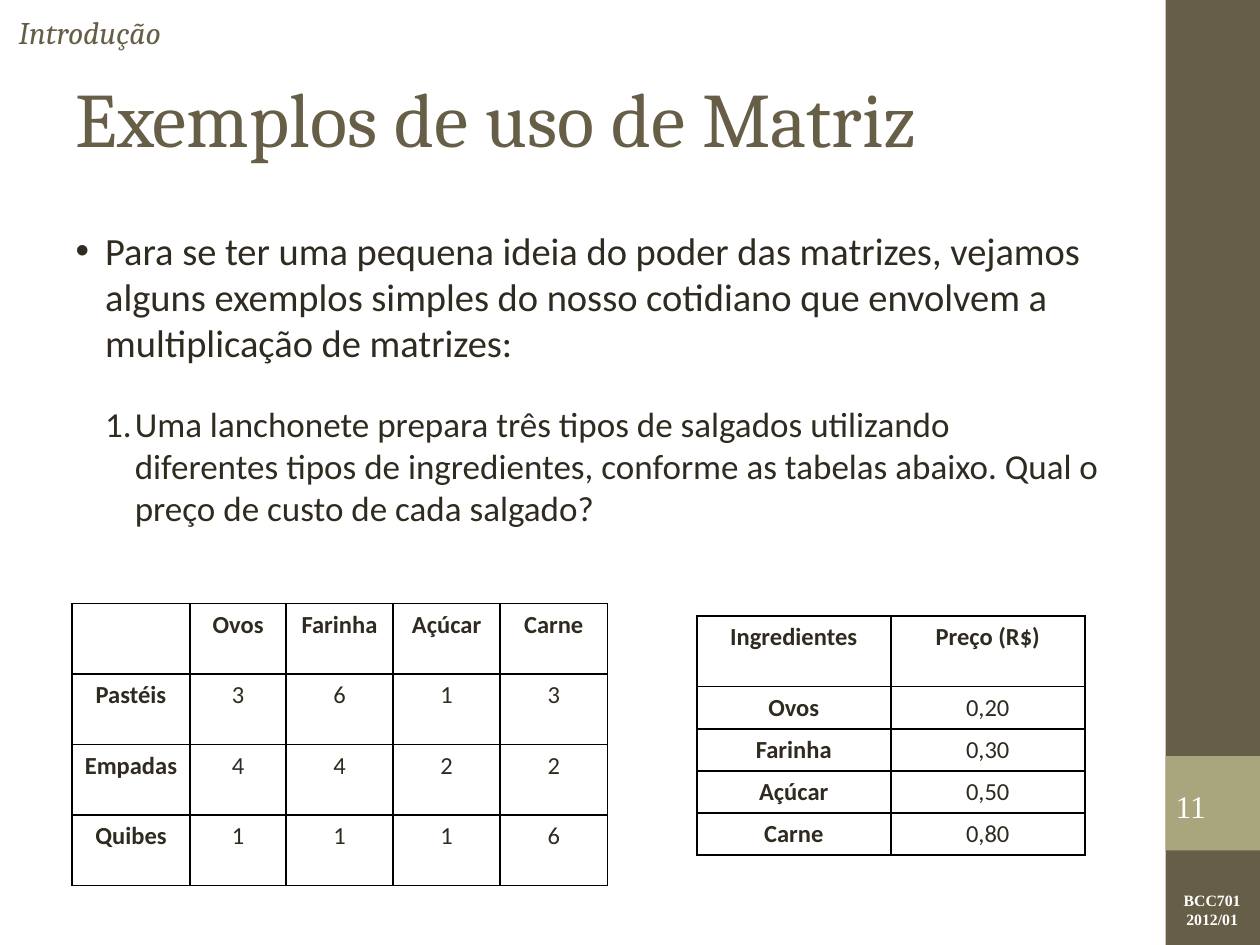
from lxml.etree import SubElement
from pptx import Presentation
from pptx.dml.color import RGBColor
from pptx.enum.shapes import MSO_SHAPE
from pptx.enum.text import MSO_ANCHOR, MSO_AUTO_SIZE, PP_ALIGN
from pptx.oxml.ns import qn
from pptx.util import Inches, Pt


def color(value):
    return RGBColor.from_string(value)


class PageBuilder:
    OLIVE, SAGE, INK, WHITE, BLACK = "675E47", "A9A57C", "2F2B20", "FFFFFF", "000000"
    HEADING, BODY, SERIF = "Cambria", "Calibri", "Times New Roman"

    def __init__(self, page):
        self.page = page

    def place(self, shape, left, top, width, height):
        shape.left, shape.top = Inches(left), Inches(top)
        shape.width, shape.height = Inches(width), Inches(height)

    def add_span(self, para, text, size, font, fill, bold=False, italic=False):
        span = para.add_run()
        span.text = text
        span.font.size, span.font.name = Pt(size), font
        span.font.bold, span.font.italic = bold, italic
        span.font.color.rgb = color(fill)

    def block(self, left, top, width, height, fill):
        shape = self.page.shapes.add_shape(
            MSO_SHAPE.RECTANGLE, Inches(left), Inches(top), Inches(width), Inches(height))
        shape.shadow.inherit = False
        shape.fill.solid()
        shape.fill.fore_color.rgb = color(fill)
        shape.line.fill.background()

    def label(self, lines, area, size, font, fill, align=PP_ALIGN.LEFT,
              anchor=MSO_ANCHOR.MIDDLE, padded=True, **style):
        box = self.page.shapes.add_textbox(*map(Inches, area))
        frame = box.text_frame
        frame.word_wrap = True
        frame.vertical_anchor = anchor
        if not padded:
            frame.margin_left = frame.margin_right = 0
            frame.margin_top = frame.margin_bottom = 0
        for index, line in enumerate(lines):
            para = frame.add_paragraph() if index else frame.paragraphs[0]
            para.alignment = align
            self.add_span(para, line, size, font, fill, **style)

    def title(self, text, area):
        shape = self.page.shapes.title
        self.place(shape, *area)
        frame = shape.text_frame
        frame.auto_size = MSO_AUTO_SIZE.NONE
        frame.vertical_anchor = MSO_ANCHOR.MIDDLE
        para = frame.paragraphs[0]
        para.alignment = PP_ALIGN.LEFT
        self.add_span(para, text, 44, self.HEADING, self.OLIVE)

    def body(self, items, area):
        """Fill the body with (text, level, size, space before, bullet tag, bullet attributes)."""
        shape = self.page.placeholders[1]
        self.place(shape, *area)
        frame = shape.text_frame
        frame.auto_size = MSO_AUTO_SIZE.NONE
        hang = Inches(0.235)
        for index, (text, level, size, before, tag, attributes) in enumerate(items):
            para = frame.add_paragraph() if index else frame.paragraphs[0]
            para.level = level
            properties = para._p.get_or_add_pPr()
            properties.set("marL", str(hang * (level + 1)))
            properties.set("indent", str(-hang))
            SubElement(properties, qn(tag), attributes)
            para.space_before = Pt(before)
            self.add_span(para, text, size, self.BODY, self.INK)

    def border(self, cell):
        properties = cell._tc.get_or_add_tcPr()
        for side in ("a:lnL", "a:lnR", "a:lnT", "a:lnB"):
            line = SubElement(properties, qn(side), w=str(Pt(1)))
            fill = SubElement(line, qn("a:solidFill"))
            SubElement(fill, qn("a:srgbClr"), val=self.BLACK)

    def table(self, rows, left, top, widths, heights):
        """Draw a bordered grid whose first row and first column are bold."""
        frame = self.page.shapes.add_table(
            len(rows), len(widths), Inches(left), Inches(top),
            Inches(sum(widths)), Inches(sum(heights)))
        grid = frame.table
        for column, width in zip(grid.columns, widths):
            column.width = Inches(width)
        for row, height in zip(grid.rows, heights):
            row.height = Inches(height)
        for r, values in enumerate(rows):
            for c, value in enumerate(values):
                cell = grid.cell(r, c)
                self.border(cell)
                cell.fill.background()
                para = cell.text_frame.paragraphs[0]
                para.alignment = PP_ALIGN.CENTER
                if value:
                    self.add_span(para, value, 14, self.BODY, self.INK, bold=r == 0 or c == 0)


def main():
    deck = Presentation()
    deck.slide_width, deck.slide_height = Inches(10), Inches(7.5)
    builder = PageBuilder(deck.slides.add_slide(deck.slide_layouts[1]))

    builder.block(9.25, 0, 0.75, 7.5, builder.OLIVE)
    builder.block(9.25, 6, 0.75, 0.75, builder.SAGE)
    builder.label(["BCC701", "2012/01"], (9.26, 7.02, 0.72, 0.4), 9, builder.SERIF,
                  builder.WHITE, PP_ALIGN.CENTER, MSO_ANCHOR.TOP, bold=True)
    builder.label(["11"], (9.33, 6.18, 0.6, 0.43), 18, builder.SERIF,
                  builder.WHITE, padded=False)
    builder.label(["Introdução"], (0.05, 0.08, 8.32, 0.34), 18, builder.HEADING,
                  builder.OLIVE, italic=True)

    builder.title("Exemplos de uso de Matriz", (0.5, 0.3, 8.33, 1.25))
    builder.body([
        ("Para se ter uma pequena ideia do poder das matrizes, vejamos alguns exemplos "
         "simples do nosso cotidiano que envolvem a multiplicação de matrizes:",
         0, 22, 0, "a:buChar", {"char": "•"}),
        ("Uma lanchonete prepara três tipos de salgados utilizando diferentes tipos de "
         "ingredientes, conforme as tabelas abaixo. Qual o preço de custo de cada salgado?",
         1, 20, 21, "a:buAutoNum", {"type": "arabicPeriod"}),
    ], (0.5, 1.75, 8.33, 5.25))

    builder.table([
        ("", "Ovos", "Farinha", "Açúcar", "Carne"),
        ("Pastéis", "3", "6", "1", "3"),
        ("Empadas", "4", "4", "2", "2"),
        ("Quibes", "1", "1", "1", "6"),
    ], 0.57, 4.79, [0.94, 0.76] + [0.85] * 3, [0.56] * 4)
    builder.table([
        ("Ingredientes", "Preço (R$)"),
        ("Ovos", "0,20"),
        ("Farinha", "0,30"),
        ("Açúcar", "0,50"),
        ("Carne", "0,80"),
    ], 5.53, 4.89, [1.54] * 2, [0.56] + [0.33] * 4)

    deck.save("out.pptx")


if __name__ == "__main__":
    main()
